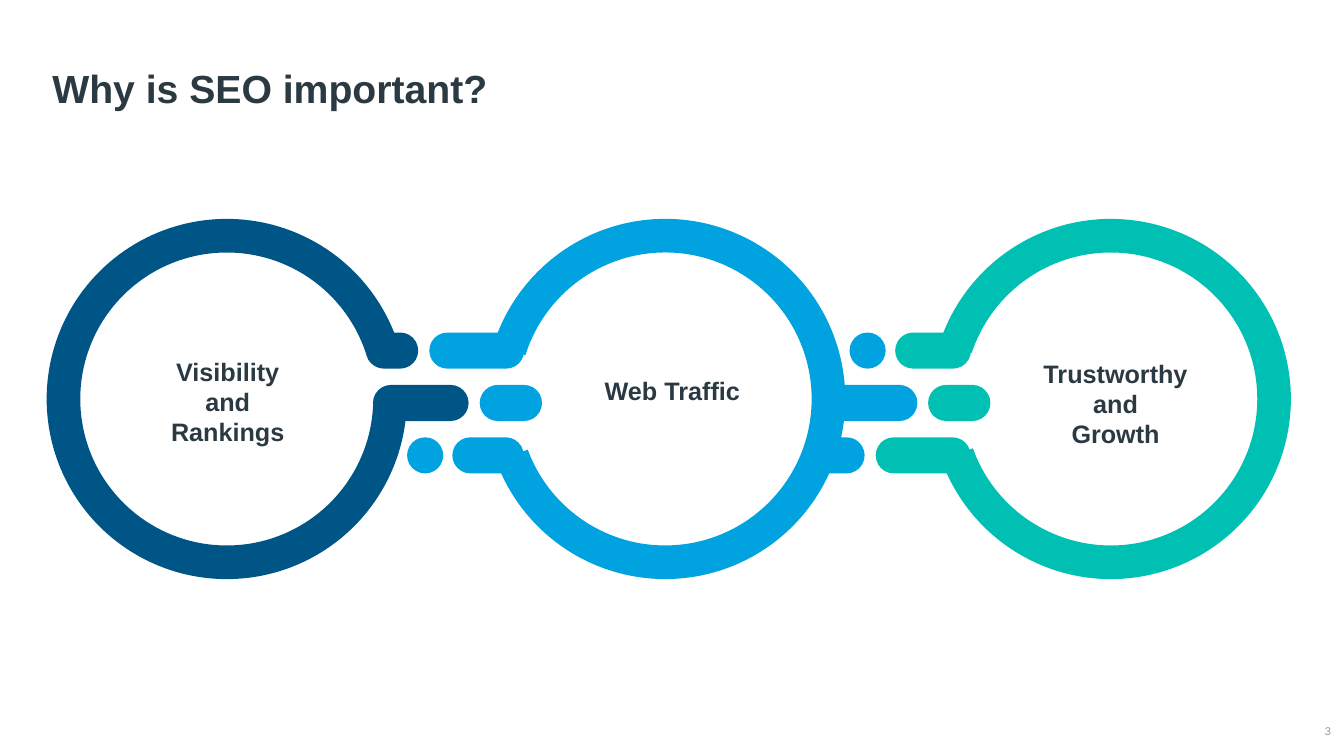
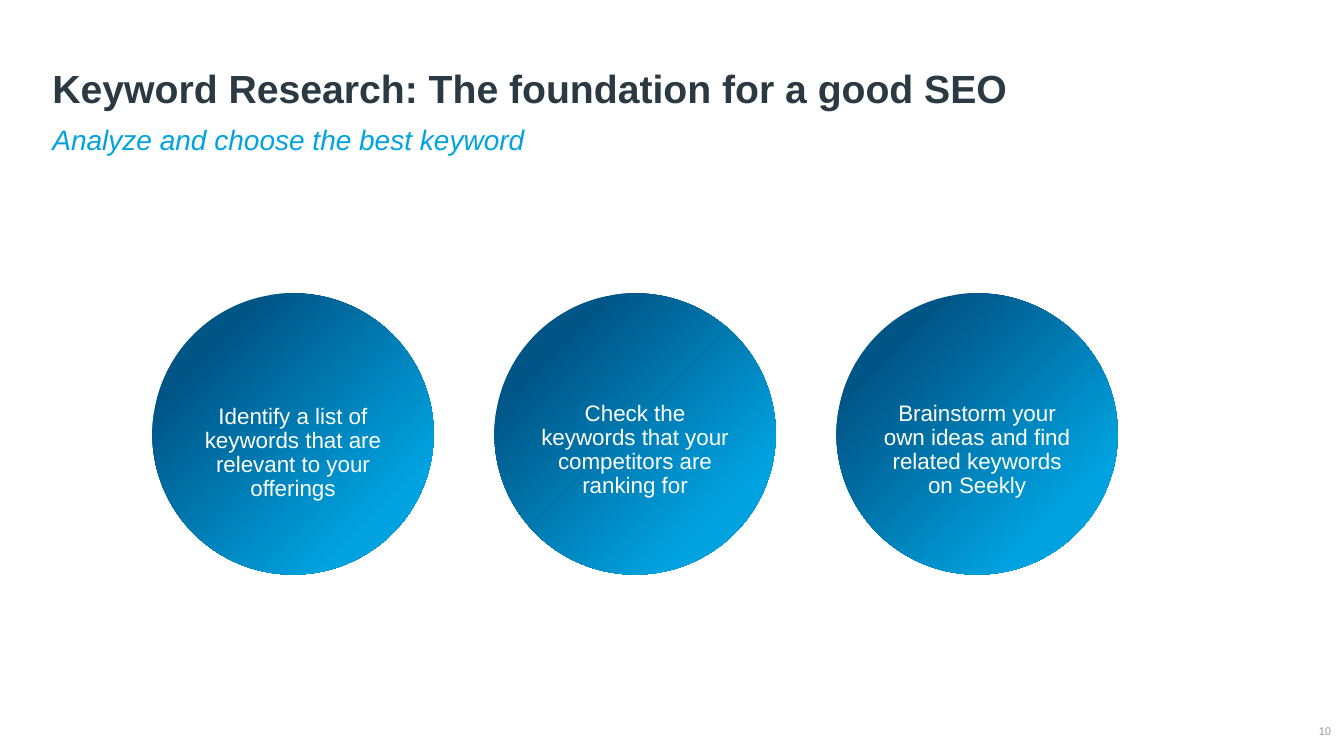
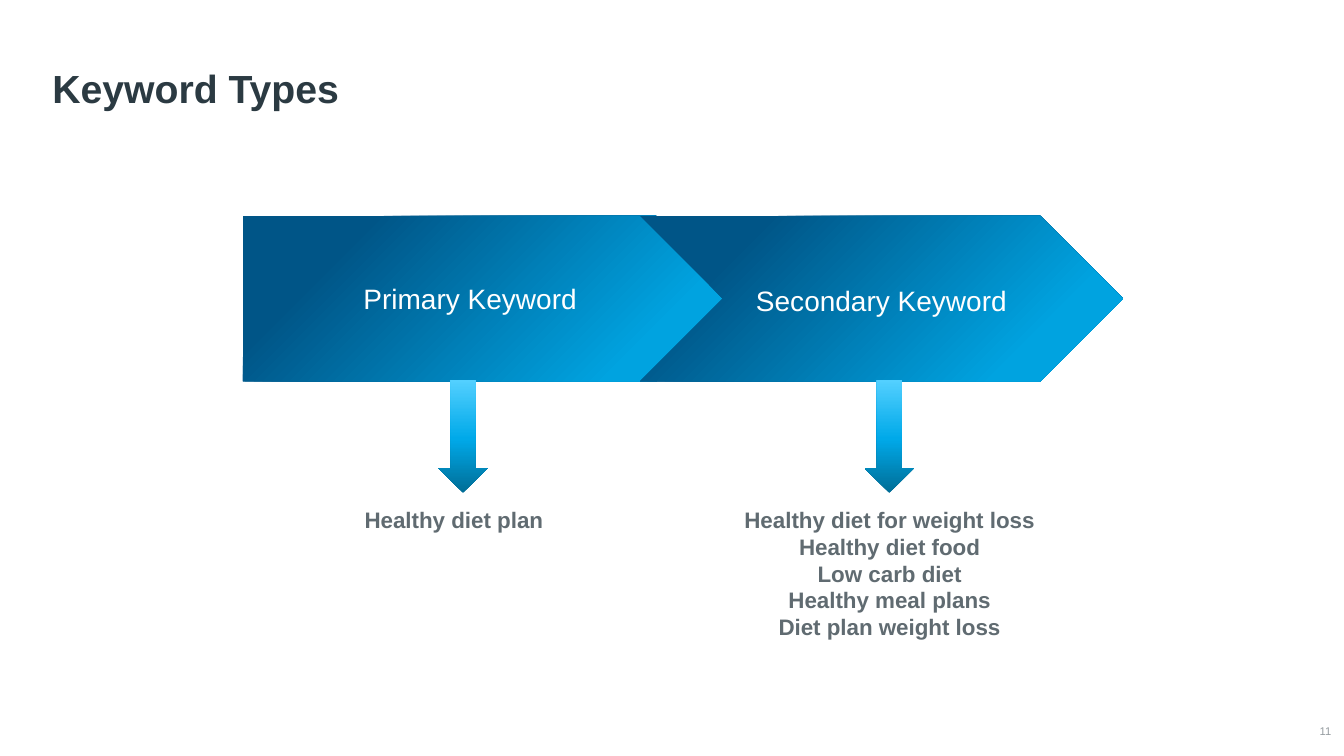
import copy

import pptx
import pptx.dml.color
import pptx.enum.shapes
import pptx.enum.text
import pptx.util

Cm = pptx.util.Cm
Pt = pptx.util.Pt
Shape = pptx.enum.shapes.MSO_SHAPE
Align = pptx.enum.text.PP_ALIGN
Anchor = pptx.enum.text.MSO_ANCHOR

FONT = "Arial"
INK = "2B3A42"
GREY = "606B71"
PALE = "959CA0"
WHITE = "FFFFFF"
NAVY = "005587"
BLUE = "00A3E0"
TEAL = "00BFB3"
DIAGONAL = {"stops": [(0.2, NAVY), (0.8, BLUE)], "clockwise": 45}
UPWARD = {"stops": [(0, "006D96"), (0.48, "00A9E9"), (1, "53D0FF")], "clockwise": 270}

RING_TOP, RING_SIZE, RING_WIDTH = 5.94, 8.23, 24
PILL_TOP, PILL_PITCH, PILL_HEIGHT = 8.38, 1.32, 0.91


def color(value):
    return pptx.dml.color.RGBColor.from_string(value)


def write_text(frame, text, size=16, fill=INK, bold=False, italic=False,
               align=Align.CENTER, anchor=Anchor.TOP, spacing=1.0,
               margins=(0.25, 0.13, 0.25, 0.13)):
    frame.word_wrap = True
    frame.auto_size = pptx.enum.text.MSO_AUTO_SIZE.NONE
    frame.vertical_anchor = anchor
    frame.margin_left, frame.margin_top, frame.margin_right, frame.margin_bottom = map(Cm, margins)
    frame.text = text
    for paragraph in frame.paragraphs:
        paragraph.alignment = align
        paragraph.line_spacing = spacing
        paragraph.font.name = FONT
        paragraph.font.size = Pt(size)
        paragraph.font.bold = bold
        paragraph.font.italic = italic
        paragraph.font.color.rgb = color(fill)


def add_text(slide, box, text, **format):
    shape = slide.shapes.add_textbox(*map(Cm, box))
    write_text(shape.text_frame, text, **format)


def add_shape(slide, kind, box):
    shape = slide.shapes.add_shape(kind, *map(Cm, box))
    shape.shadow.inherit = False
    shape.line.fill.background()
    return shape


def add_gradient_shape(slide, kind, box, gradient):
    shape = add_shape(slide, kind, box)
    shape.fill.gradient()
    shape.fill.gradient_angle = 360 - gradient["clockwise"]
    stop_list = shape._element.xpath(".//a:gsLst")[0]
    while len(stop_list) < len(gradient["stops"]):
        stop_list.append(copy.deepcopy(stop_list[0]))
    for stop, (position, value) in zip(shape.fill.gradient_stops, gradient["stops"]):
        stop.position = position
        stop.color.rgb = color(value)
    return shape


def add_ring(slide, left, start, end, value):
    ring = add_shape(slide, Shape.ARC, (left, RING_TOP, RING_SIZE, RING_SIZE))
    ring.fill.background()
    ring.line.color.rgb = color(value)
    ring.line.width = Pt(RING_WIDTH)
    for index, degrees in enumerate((start, end)):
        ring.adjustments[index] = degrees * 0.6


def add_pill(slide, row, left, width, value):
    pill = add_shape(slide, Shape.ROUNDED_RECTANGLE,
                     (left, PILL_TOP + row * PILL_PITCH, width, PILL_HEIGHT))
    pill.adjustments[0] = 0.5
    pill.fill.solid()
    pill.fill.fore_color.rgb = color(value)


def add_slide(presentation, title, number):
    slide = presentation.slides.add_slide(presentation.slide_layouts[5])
    placeholder = slide.shapes.title
    placeholder.left, placeholder.top = Cm(1.07), Cm(0.81)
    placeholder.width, placeholder.height = Cm(31.5), Cm(2.13)
    write_text(placeholder.text_frame, title, size=28, bold=True, align=Align.LEFT,
               anchor=Anchor.BOTTOM, spacing=0.9)
    add_text(slide, (32.56, 18.19, 0.99, 0.48), str(number), size=8, fill=PALE,
             align=Align.RIGHT, anchor=Anchor.MIDDLE, margins=(0, 0, 0, 0))
    return slide


def build_importance(presentation):
    slide = add_slide(presentation, "Why is SEO important?", 3)
    rings = [
        (23.88, 198.38, 160.26, TEAL, [(0, 22.56, 1.91), (1, 23.39, 1.57), (2, 22.07, 2.39)]),
        (12.65, 197.47, 159.71, BLUE, [(0, 10.82, 2.39), (1, 12.09, 1.57), (2, 11.4, 1.8),
                                       (2, 10.26, 0.91), (0, 21.41, 0.91), (1, 20.73, 2.39),
                                       (2, 20.47, 1.32)]),
        (1.6, 2.08, 342.27, NAVY, [(0, 9.22, 1.32), (1, 9.4, 2.41)]),
    ]
    for left, start, end, value, pills in rings:
        add_ring(slide, left, start, end, value)
        for row, pill_left, width in pills:
            add_pill(slide, row, pill_left, width, value)
    labels = [
        ((2.21, 8.84, 7.06, 2.57), "Visibility\nand\nRankings"),
        ((14.15, 9.32, 5.59, 1.02), "Web Traffic"),
        ((24.43, 8.89, 7.37, 2.57), "Trustworthy\nand\nGrowth"),
    ]
    for box, text in labels:
        add_text(slide, box, text, size=18, bold=True)


def build_research(presentation):
    slide = add_slide(presentation, "Keyword Research: The foundation for a good SEO", 10)
    add_text(slide, (1.07, 2.95, 29.85, 1.12), "Analyze and choose the best keyword",
             size=20, fill=BLUE, italic=True, align=Align.LEFT)
    steps = [
        ("Identify a list of keywords that are relevant to your offerings", 1.78),
        ("Check the keywords that your competitors are ranking for", 1.7),
        ("Brainstorm your own ideas and find related keywords on Seekly", 1.7),
    ]
    for index, (text, inset) in enumerate(steps):
        circle = add_gradient_shape(slide, Shape.OVAL,
                                    (3.84 + index * 8.62, 7.39, 7.09, 7.09), DIAGONAL)
        write_text(circle.text_frame, text, fill=WHITE, spacing=0.9, margins=(0, inset, 0, 0))


def build_types(presentation):
    slide = add_slide(presentation, "Keyword Types", 11)
    keyword_types = [
        (Shape.PENTAGON, 6.12, 12.5, "Primary Keyword", 0.1, 11.05, 7.49, "Healthy diet plan"),
        (Shape.CHEVRON, 16.13, 12.17, "Secondary Keyword", 0.2, 21.79, 18.47,
         "Healthy diet for weight loss\nHealthy diet food\nLow carb diet\n"
         "Healthy meal plans\nDiet plan weight loss"),
    ]
    for kind, left, width, name, inset, arrow_left, label_left, examples in keyword_types:
        band = add_gradient_shape(slide, kind, (left, 5.44, width, 4.17), DIAGONAL)
        write_text(band.text_frame, name, size=20, fill=WHITE, anchor=Anchor.MIDDLE,
                   spacing=0.9, margins=(0, inset, 0, 0))
        add_gradient_shape(slide, Shape.DOWN_ARROW, (arrow_left, 9.58, 1.24, 2.84), UPWARD)
        height = 0.25 + 0.69 * len(examples.split("\n"))
        add_text(slide, (label_left, 12.62, 7.9, height), examples, fill=GREY, bold=True)


def main():
    presentation = pptx.Presentation()
    presentation.slide_width = Cm(33.87)
    presentation.slide_height = Cm(19.05)
    build_importance(presentation)
    build_research(presentation)
    build_types(presentation)
    presentation.save("out.pptx")


if __name__ == "__main__":
    main()
